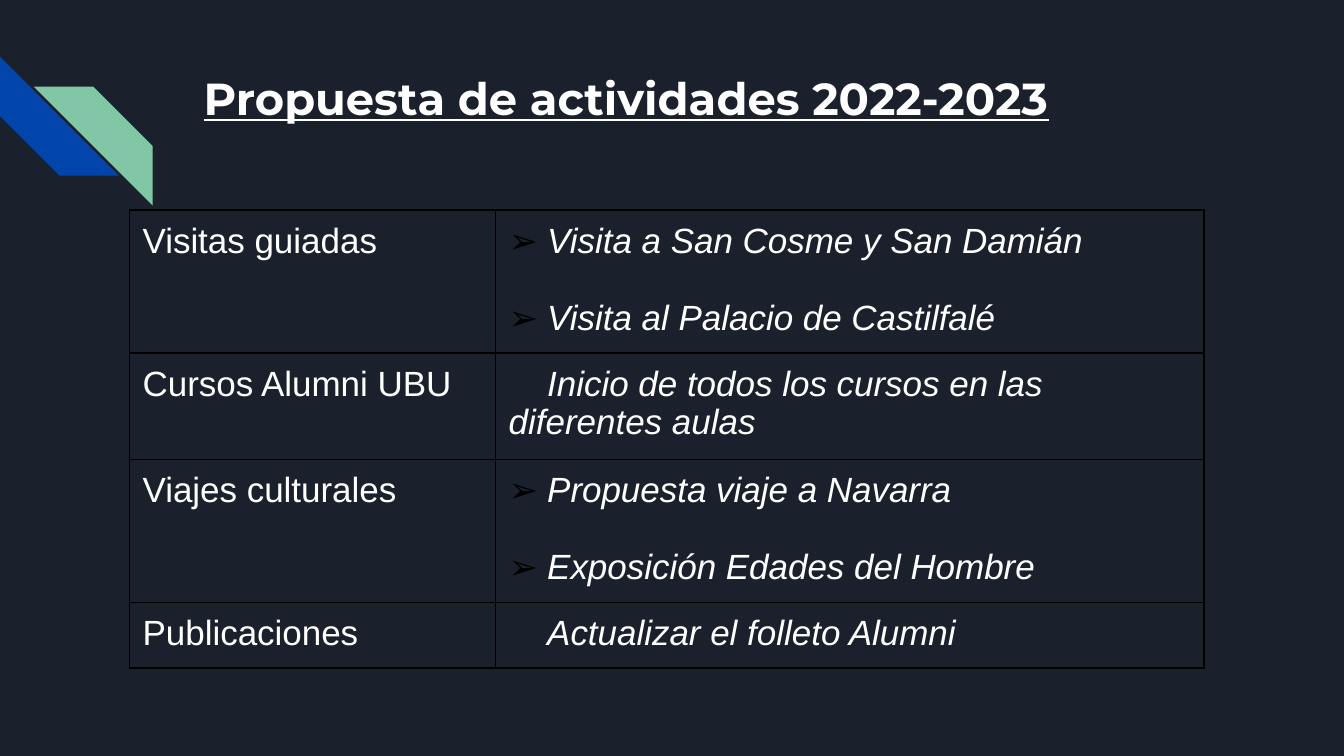
from dataclasses import dataclass

import pptx
import pptx.dml.color
import pptx.enum.shapes
import pptx.enum.text
import pptx.oxml
import pptx.oxml.ns
import pptx.util

Pt = pptx.util.Pt
RGB = pptx.dml.color.RGBColor.from_string
NS = pptx.oxml.ns.nsdecls("a")


@dataclass(frozen=True)
class Theme:
    background: str = "1B212C"
    blue: str = "0145AC"
    green: str = "82C7A5"
    text: str = "FFFFFF"
    rule: str = "000000"
    title_font: str = "Montserrat"
    body_font: str = "Arial"
    title_size: float = 32
    body_size: float = 25
    line_spacing: float = 0.97
    bullet_gap: float = 27.8
    inset: float = 9.4
    indent: float = 27.5


@dataclass(frozen=True)
class Stripe:
    left: float
    top: float
    rotation: float
    color: str


@dataclass(frozen=True)
class Activity:
    area: str
    plans: tuple[str, ...]
    height: float


THEME = Theme()
STRIPE_SIZE = 85
STRIPES = [
    Stripe(0, 40.5, 270, THEME.blue),
    Stripe(24, 61.8, 90, THEME.green),
]
COLUMN_WIDTHS = [261.5, 506]
ACTIVITIES = [
    Activity("Visitas guiadas",
             ("Visita a San Cosme y San Damián", "Visita al Palacio de Castilfalé"), 102.2),
    Activity("Cursos Alumni UBU",
             ("Inicio de todos los cursos en las diferentes aulas",), 76),
    Activity("Viajes culturales",
             ("Propuesta viaje a Navarra", "Exposición Edades del Hombre"), 102.2),
    Activity("Publicaciones", ("Actualizar el folleto Alumni",), 46.8),
]


def format_run(r, font: str, size: float) -> None:
    r.font.name = font
    r.font.size = Pt(size)
    r.font.color.rgb = RGB(THEME.text)


def add_stripe(s, stripe: Stripe) -> None:
    sp = s.shapes.add_shape(pptx.enum.shapes.MSO_SHAPE.DIAGONAL_STRIPE,
                            Pt(stripe.left), Pt(stripe.top), Pt(STRIPE_SIZE), Pt(STRIPE_SIZE))
    sp.rotation = stripe.rotation
    sp.shadow.inherit = False
    sp.fill.solid()
    sp.fill.fore_color.rgb = RGB(stripe.color)
    sp.line.fill.background()


def add_title(s, text: str) -> None:
    sp = s.shapes.title
    sp.left, sp.top, sp.width, sp.height = Pt(136), Pt(41), Pt(739), Pt(96)
    tf = sp.text_frame
    tf.text = text
    tf.word_wrap = True
    tf.auto_size = pptx.enum.text.MSO_AUTO_SIZE.NONE
    tf.vertical_anchor = pptx.enum.text.MSO_ANCHOR.TOP
    tf.margin_left = tf.margin_right = tf.margin_top = tf.margin_bottom = Pt(THEME.inset)
    p = tf.paragraphs[0]
    p.alignment = pptx.enum.text.PP_ALIGN.LEFT
    r = p.runs[0]
    format_run(r, THEME.title_font, THEME.title_size)
    r.font.bold = r.font.underline = True


def add_bullet(p) -> None:
    pPr = p._p.get_or_add_pPr()
    pPr.set("marL", str(Pt(THEME.indent)))
    pPr.set("indent", str(-Pt(THEME.indent)))
    for xml in (f'<a:buClr {NS}><a:srgbClr val="{THEME.rule}"/></a:buClr>',
                f'<a:buFont {NS} typeface="{THEME.body_font}"/>',
                f'<a:buChar {NS} char="➢"/>'):
        pPr.append(pptx.oxml.parse_xml(xml))


def fill_cell(cell, lines: tuple[str, ...], is_plan: bool) -> None:
    # Borders come before the fill in the cell properties
    tcPr = cell._tc.get_or_add_tcPr()
    for side in ("lnL", "lnR", "lnT", "lnB"):
        tcPr.append(pptx.oxml.parse_xml(
            f'<a:{side} {NS} w="{Pt(1)}"><a:solidFill><a:srgbClr val="{THEME.rule}"/>'
            f'</a:solidFill></a:{side}>'))
    cell.fill.background()
    cell.margin_left = cell.margin_right = Pt(THEME.inset)
    cell.margin_top = cell.margin_bottom = Pt(THEME.inset)
    tf = cell.text_frame
    tf.text = "\n".join(lines)
    for i, p in enumerate(tf.paragraphs):
        if len(lines) > 1:
            add_bullet(p)
        elif is_plan:
            p._p.get_or_add_pPr().set("indent", str(Pt(THEME.indent)))
        p.line_spacing = THEME.line_spacing
        if i:
            p.space_before = Pt(THEME.bullet_gap)
        r = p.runs[0]
        format_run(r, THEME.body_font, THEME.body_size)
        r.font.italic = is_plan


def add_activities(s) -> None:
    table = s.shapes.add_table(len(ACTIVITIES), len(COLUMN_WIDTHS), Pt(92.5), Pt(150),
                               Pt(sum(COLUMN_WIDTHS)),
                               Pt(sum(a.height for a in ACTIVITIES))).table
    table.first_row = table.horz_banding = False
    for column, width in zip(table.columns, COLUMN_WIDTHS):
        column.width = Pt(width)
    for i, activity in enumerate(ACTIVITIES):
        table.rows[i].height = Pt(activity.height)
        fill_cell(table.cell(i, 0), (activity.area,), False)
        fill_cell(table.cell(i, 1), activity.plans, True)


def main() -> None:
    prs = pptx.Presentation()
    prs.slide_width, prs.slide_height = Pt(960), Pt(540)
    s = prs.slides.add_slide(prs.slide_layouts.get_by_name("Title Only"))
    s.background.fill.solid()
    s.background.fill.fore_color.rgb = RGB(THEME.background)

    # Corner decoration
    for stripe in STRIPES:
        add_stripe(s, stripe)

    # Title and table of activities
    add_title(s, "Propuesta de actividades 2022-2023")
    add_activities(s)
    prs.save("out.pptx")


if __name__ == "__main__":
    main()
